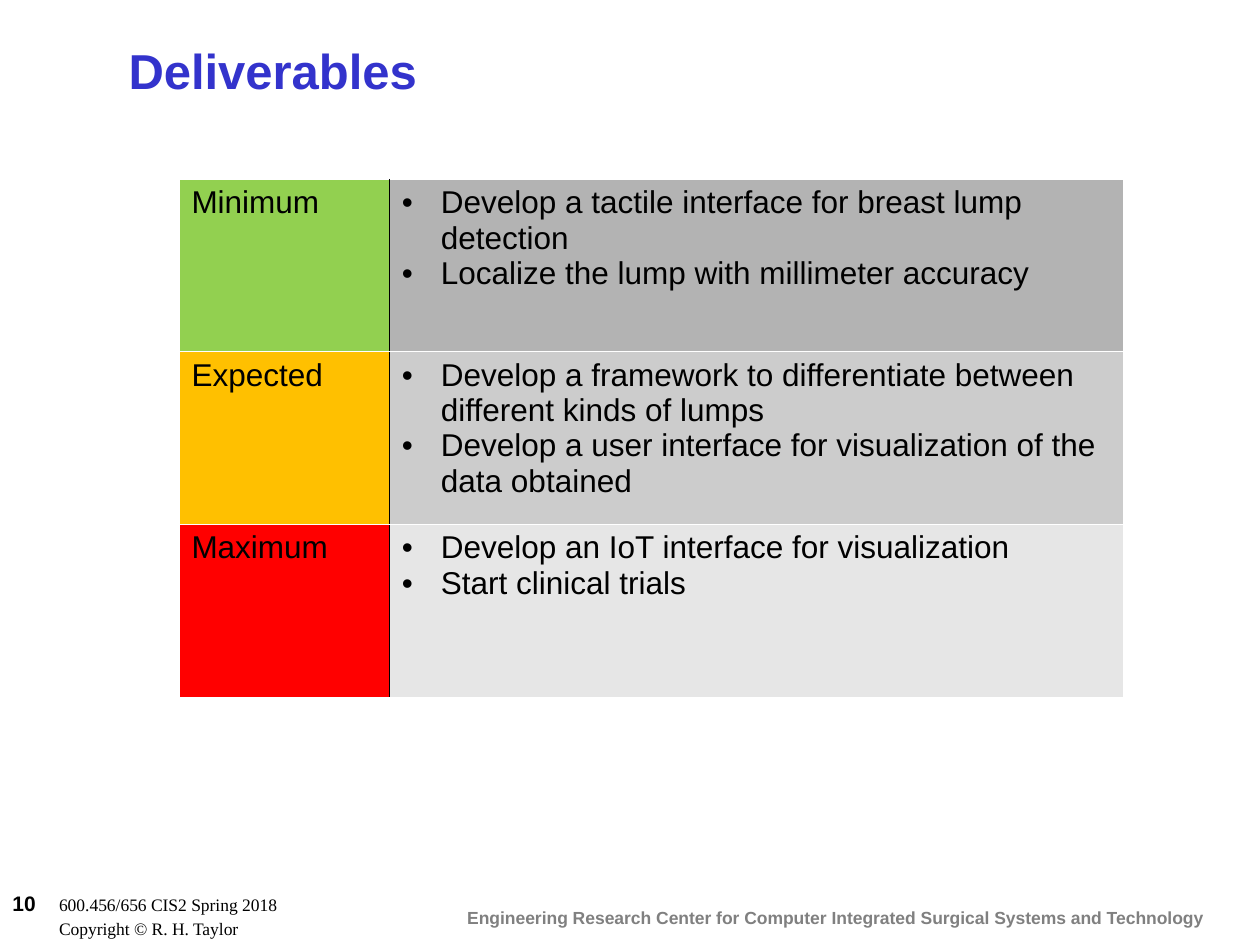
from lxml import etree
from pptx import Presentation
from pptx.dml.color import RGBColor
from pptx.enum.text import MSO_ANCHOR, MSO_AUTO_SIZE, PP_ALIGN
from pptx.oxml.ns import qn
from pptx.util import Inches, Pt

MIDDLE, BOTTOM = MSO_ANCHOR.MIDDLE, MSO_ANCHOR.BOTTOM
LEFT = PP_ALIGN.LEFT
NO_AUTOFIT = MSO_AUTO_SIZE.NONE
TITLE_ONLY = 5

TITLE_FORMAT = {"name": "Arial", "size": Pt(28), "bold": True}
TABLE_FORMAT = {"name": "Arial", "size": Pt(18), "bold": False}
NUMBER_FORMAT = {"name": "Arial", "size": Pt(12), "bold": True}
COURSE_FORMAT = {"name": "Times New Roman", "size": Pt(10), "bold": False}
CENTER_FORMAT = {"name": "Arial", "size": Pt(10), "bold": True}

COLUMN_WIDTHS = (1.67, 5.82)
ROW_HEIGHT = 1.37
HAIRLINE = ("FFFFFF", 0.06)
DIVIDER = ("000000", 0.5)

DELIVERABLES = [
    ("Minimum", "92D050", "B3B3B3", [
        "Develop a tactile interface for breast lump detection",
        "Localize the lump with millimeter accuracy"]),
    ("Expected", "FFC000", "CCCCCC", [
        "Develop a framework to differentiate between different kinds of lumps",
        "Develop a user interface for visualization of the data obtained"]),
    ("Maximum", "FF0000", "E6E6E6", [
        "Develop an IoT interface for visualization",
        "Start clinical trials"]),
]


def color(hex_value):
    return RGBColor.from_string(hex_value)


def add_run(paragraph, text, font_format, hex_value="000000"):
    run = paragraph.add_run()
    run.text = text
    for attribute, value in font_format.items():
        setattr(run.font, attribute, value)
    run.font.color.rgb = color(hex_value)


def paragraphs(frame, count):
    """Return the first paragraph of a frame and as many new ones as needed."""
    return [frame.paragraphs[0]] + [frame.add_paragraph() for _ in range(count - 1)]


def hang(paragraph, inches):
    """Set a hanging indent and return the paragraph properties."""
    properties = paragraph._p.get_or_add_pPr()
    properties.set("marL", str(Inches(inches)))
    properties.set("indent", str(-Inches(inches)))
    return properties


def add_bullet(paragraph):
    properties = hang(paragraph, 0.31)
    etree.SubElement(properties, qn("a:buFont"), typeface="Arial")
    etree.SubElement(properties, qn("a:buChar"), char="•")


def set_borders(cell, left=HAIRLINE, right=HAIRLINE):
    properties = cell._tc.get_or_add_tcPr()
    sides = {"L": left, "R": right, "T": HAIRLINE, "B": HAIRLINE}
    for side, (hex_value, points) in sides.items():
        line = etree.SubElement(properties, qn(f"a:ln{side}"), w=str(Pt(points)))
        fill = etree.SubElement(line, qn("a:solidFill"))
        etree.SubElement(fill, qn("a:srgbClr"), val=hex_value)


def fill_cell(cell, hex_value):
    cell.fill.solid()
    cell.fill.fore_color.rgb = color(hex_value)


def add_title(slide, text):
    title = slide.shapes.title
    title.left, title.top = Inches(0.92), Inches(0.25)
    title.width, title.height = Inches(8.5), Inches(0.67)
    frame = title.text_frame
    frame.auto_size = NO_AUTOFIT
    frame.vertical_anchor = MIDDLE
    heading = frame.paragraphs[0]
    heading.alignment = LEFT
    heading.line_spacing = 0.9
    add_run(heading, text, TITLE_FORMAT, "3333CC")


def add_deliverables(slide):
    rows = len(DELIVERABLES)
    table = slide.shapes.add_table(
        rows, len(COLUMN_WIDTHS), Inches(1.42), Inches(1.42),
        Inches(sum(COLUMN_WIDTHS)), Inches(rows * ROW_HEIGHT)).table
    table.first_row = table.horz_banding = False
    for column, width in zip(table.columns, COLUMN_WIDTHS):
        column.width = Inches(width)
    for index, (level, level_fill, goals_fill, goals) in enumerate(DELIVERABLES):
        level_cell, goals_cell = table.rows[index].cells
        set_borders(level_cell, right=DIVIDER)
        set_borders(goals_cell, left=DIVIDER)
        fill_cell(level_cell, level_fill)
        fill_cell(goals_cell, goals_fill)
        add_run(level_cell.text_frame.paragraphs[0], level, TABLE_FORMAT)
        for paragraph, goal in zip(paragraphs(goals_cell.text_frame, len(goals)), goals):
            add_bullet(paragraph)
            add_run(paragraph, goal, TABLE_FORMAT)


def add_text_frame(slide, left, top, width, height, wrap):
    box = slide.shapes.add_textbox(*map(Inches, (left, top, width, height)))
    box.text_frame.word_wrap = wrap
    return box.text_frame


def add_footer(slide):
    center = add_text_frame(slide, 3.61, 7.15, 6.06, 0.27, wrap=False)
    add_run(center.paragraphs[0],
            "Engineering Research Center for Computer Integrated Surgical "
            "Systems and Technology", CENTER_FORMAT, "808080")

    course = add_text_frame(slide, 0, 7.03, 4.08, 0.47, wrap=True)
    course.vertical_anchor = BOTTOM
    number_line, copyright_line = paragraphs(course, 2)
    for line in (number_line, copyright_line):
        hang(line, 0.37)
    copyright_line.space_before = Pt(1)
    add_run(number_line, "10\t", NUMBER_FORMAT)
    add_run(number_line, "600.456/656 CIS2 Spring 2018", COURSE_FORMAT)
    add_run(copyright_line, "\tCopyright © R. H. Taylor", COURSE_FORMAT)


def main():
    deck = Presentation()
    deck.slide_width, deck.slide_height = Inches(10), Inches(7.5)
    slide = deck.slides.add_slide(deck.slide_layouts[TITLE_ONLY])
    add_footer(slide)
    add_deliverables(slide)
    add_title(slide, "Deliverables")
    deck.save("out.pptx")


if __name__ == "__main__":
    main()
